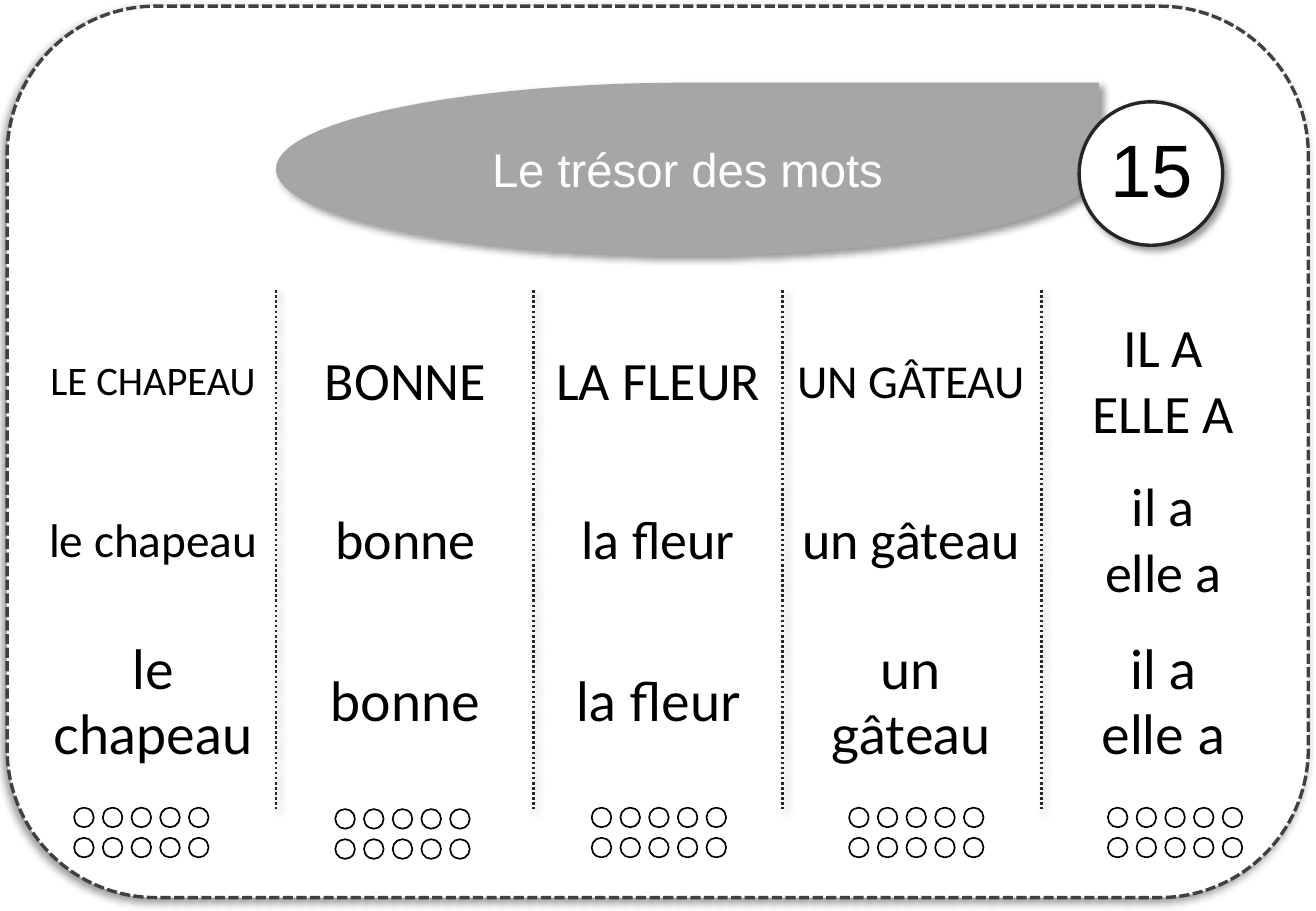
from lxml.etree import SubElement
from pptx import Presentation
from pptx.dml.color import RGBColor
from pptx.enum.dml import MSO_LINE_DASH_STYLE as Dash
from pptx.enum.shapes import MSO_CONNECTOR as Connector, MSO_SHAPE as Shape
from pptx.enum.text import MSO_ANCHOR as Anchor, PP_ALIGN as Align
from pptx.oxml.ns import qn
from pptx.util import Cm, Pt

BLACK = RGBColor(0x00, 0x00, 0x00)
WHITE = RGBColor(0xFF, 0xFF, 0xFF)
GREY = RGBColor(0xA6, 0xA6, 0xA6)
CHARCOAL = RGBColor(0x26, 0x26, 0x26)
FRAME_GREY = RGBColor(0x40, 0x40, 0x40)

NO_GRID_STYLE = "{2D5ABB26-0587-4C30-8999-92F81FD0307C}"
SEPARATORS = [5.77, 11.15, 16.36, 21.77]
DOT_GROUPS = [(1.55, 16.89), (7.01, 16.92), (12.37, 16.89), (17.75, 16.89), (23.16, 16.89)]
WORD_ROWS = [
    ("Calibri", [("LE CHAPEAU", 24), ("BONNE", 32), ("LA FLEUR", 32),
                 ("UN GÂTEAU", 28), ("IL A\nELLE A", 32)]),
    ("Calibri", [("le chapeau", 28), ("bonne", 32), ("la fleur", 32),
                 ("un gâteau", 32), ("il a\nelle a", 32)]),
    ("Lato", [("le chapeau", 32), ("bonne", 32), ("la fleur", 32),
              ("un gâteau", 32), ("il a\nelle a", 32)]),
]


class WordCard:
    """Draws the elements of a vocabulary card on one slide."""

    def __init__(self, slide):
        self.shapes = slide.shapes

    def effects(self, item, angle=None):
        effects = SubElement(item._element.spPr, qn("a:effectLst"))
        if angle is not None:
            shadow = SubElement(effects, qn("a:outerShdw"), blurRad=str(Pt(4)), dist=str(Pt(3)),
                                dir=str(angle * 60000), algn="tl", rotWithShape="0")
            color = SubElement(shadow, qn("a:srgbClr"), val=str(BLACK))
            SubElement(color, qn("a:alpha"), val="40000")

    def outline(self, line, color, width, dash=None):
        line.color.rgb = color
        line.width = Pt(width)
        if dash is not None:
            line.dash_style = dash

    def shape(self, kind, left, top, width, height, fill, line=None, angle=None, parent=None):
        shape = (parent or self.shapes).add_shape(kind, Cm(left), Cm(top), Cm(width), Cm(height))
        shape.fill.solid()
        shape.fill.fore_color.rgb = fill
        if line:
            self.outline(shape.line, *line)
        else:
            shape.line.fill.background()
        self.effects(shape, angle)
        return shape

    def separator(self, x):
        line = self.shapes.add_connector(Connector.STRAIGHT, Cm(x), Cm(6.07), Cm(x), Cm(16.92))
        self.outline(line.line, CHARCOAL, 1.5, Dash.ROUND_DOT)
        self.effects(line, 45)

    def dots(self, left, top):
        group = self.shapes.add_group_shape()
        for row in range(2):
            for column in range(5):
                self.shape(Shape.OVAL, left + column * 0.6, top + row * 0.63, 0.41, 0.41,
                           WHITE, (BLACK, 1), parent=group.shapes)

    def set_text(self, frame, text, size, font, color=BLACK):
        frame.text = text
        for para in frame.paragraphs:
            para.alignment = Align.CENTER
            for span in para.runs:
                span.font.size = Pt(size)
                span.font.name = font
                span.font.color.rgb = color

    def label(self, left, top, width, height, text, size):
        box = self.shapes.add_textbox(Cm(left), Cm(top), Cm(width), Cm(height))
        box.text_frame.word_wrap = True
        self.set_text(box.text_frame, text, size, "Arial")

    def words(self, left, top, width, height, rows):
        frame = self.shapes.add_table(len(rows), len(rows[0][1]), Cm(left), Cm(top),
                                      Cm(width), Cm(height))
        table = frame.table
        table.first_row = table.horz_banding = False
        table._tbl.tblPr.find(qn("a:tableStyleId")).text = NO_GRID_STYLE
        for row, (font, entries) in enumerate(rows):
            for column, (text, size) in enumerate(entries):
                cell = table.cell(row, column)
                cell.fill.background()
                cell.vertical_anchor = Anchor.MIDDLE
                self.set_text(cell.text_frame, text, size, font)


def main():
    deck = Presentation()
    deck.slide_width, deck.slide_height = Cm(27.51), Cm(19.05)
    card = WordCard(deck.slides.add_slide(deck.slide_layouts[6]))

    card.shape(Shape.ROUNDED_RECTANGLE, 0.15, 0.13, 27.2, 18.64, WHITE,
               (FRAME_GREY, 2, Dash.SQUARE_DOT), 135)
    for x in SEPARATORS:
        card.separator(x)
    for left, top in DOT_GROUPS:
        card.dots(left, top)

    banner = card.shape(Shape.TEAR, 5.77, 1.73, 17.2, 3.61, GREY, angle=45)
    banner.text_frame.vertical_anchor = Anchor.MIDDLE
    card.set_text(banner.text_frame, "Le trésor des mots", 28, "Arial", WHITE)
    card.shape(Shape.OVAL, 22.56, 2.13, 3, 3, WHITE, (CHARCOAL, 2), 45)
    card.label(22.58, 2.46, 3, 2.79, "15", 44)
    card.words(0.56, 6.32, 26.4, 10, WORD_ROWS)

    deck.save("out.pptx")


if __name__ == "__main__":
    main()
